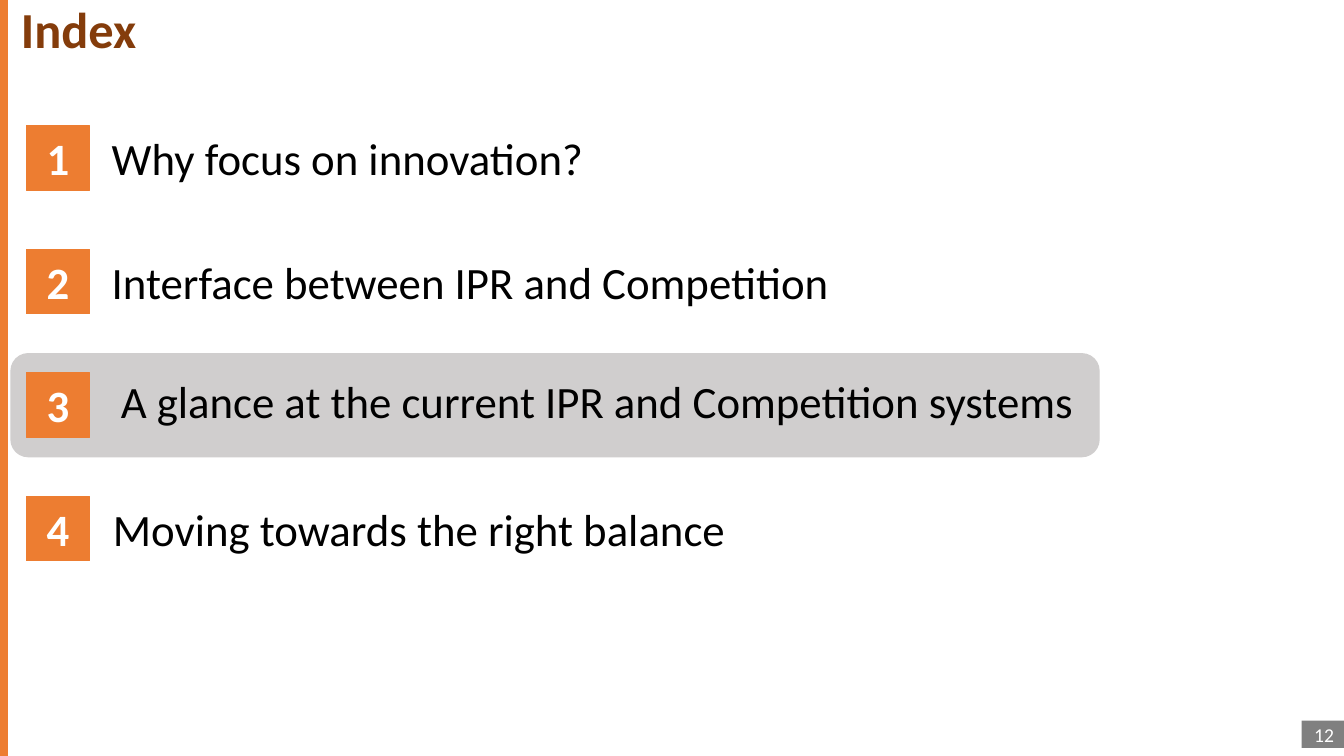
from lxml import etree
from pptx import Presentation
from pptx import util as u
from pptx.dml.color import RGBColor
from pptx.enum import shapes, text
from pptx.oxml.ns import qn

COLORS = {"accent": "ED7D31", "title": "843C0B", "highlight": "D0CECE",
          "page": "808080", "white": "FFFFFF", "black": "000000"}
SHAPE, ALIGN = shapes.MSO_SHAPE, text.PP_ALIGN

deck = Presentation()
deck.slide_width, deck.slide_height = u.Inches(13.33), u.Inches(7.5)
slide = deck.slides.add_slide(deck.slide_layouts[6])


def add_block(preset, box, fill, line_width=0):
    block = slide.shapes.add_shape(preset, *map(u.Inches, box))
    block.shadow.inherit = False
    block.fill.solid()
    block.fill.fore_color.rgb = RGBColor.from_string(COLORS[fill])
    if line_width:
        block.line.color.rgb = RGBColor.from_string(COLORS[fill])
        block.line.width = u.Pt(line_width)
    else:
        block.line.fill.background()
    return block


def write(holder, words, size, color, bold=False, align=ALIGN.LEFT,
          anchor=text.MSO_ANCHOR.TOP):
    frame = holder.text_frame
    frame.text = words
    frame.word_wrap = True
    frame.vertical_anchor = anchor
    paragraph = frame.paragraphs[0]
    paragraph.alignment = align
    font = paragraph.runs[0].font
    font.name, font.size, font.bold = "Calibri", u.Pt(size), bold
    font.color.rgb = RGBColor.from_string(COLORS[color])
    return paragraph


# Accent stripe along the left edge
stripe = slide.shapes.add_connector(
    shapes.MSO_CONNECTOR.STRAIGHT, u.Inches(0.04), 0, u.Inches(0.04), deck.slide_height)
stripe.line.color.rgb = RGBColor.from_string(COLORS["accent"])
stripe.line.width = u.Pt(6)
etree.SubElement(stripe._element.spPr, qn("a:effectLst"))

# Page number
page_number = add_block(SHAPE.RECTANGLE, (12.91, 7.15, 0.42, 0.27), "page")
write(page_number, "12", 14, "white", align=ALIGN.RIGHT, anchor=text.MSO_ANCHOR.MIDDLE)

# Highlight behind the current section
add_block(SHAPE.ROUNDED_RECTANGLE, (0.11, 3.51, 10.79, 1.02), "highlight", 1)

# Title
title = slide.shapes.add_textbox(*map(u.Inches, (0.11, 0, 13.22, 1.45)))
write(title, "Index", 36, "title", bold=True).line_spacing = 0.9

# Numbered sections: words, left, width, lift above the number's row
first_row, row_step, row_height = 1.25, 1.225, 0.64
sections = [
    ("Why focus on innovation?", 1.01, 9.39, 0),
    ("Interface between IPR and Competition", 1.01, 9.39, 0),
    ("A glance at the current IPR and Competition systems", 1.1, 10.67, 0.04),
    ("Moving towards the right balance", 1.02, 10.05, 0),
]
for index, (words, left, width, lift) in enumerate(sections):
    top = first_row + index * row_step
    number = add_block(SHAPE.RECTANGLE, (0.26, top, 0.63, row_height), "accent", 0.75)
    write(number, str(index + 1), 32, "white", bold=True, align=ALIGN.CENTER)
    section = slide.shapes.add_textbox(
        *map(u.Inches, (left, top - lift, width, row_height)))
    write(section, words, 32, "black")

deck.save("out.pptx")
